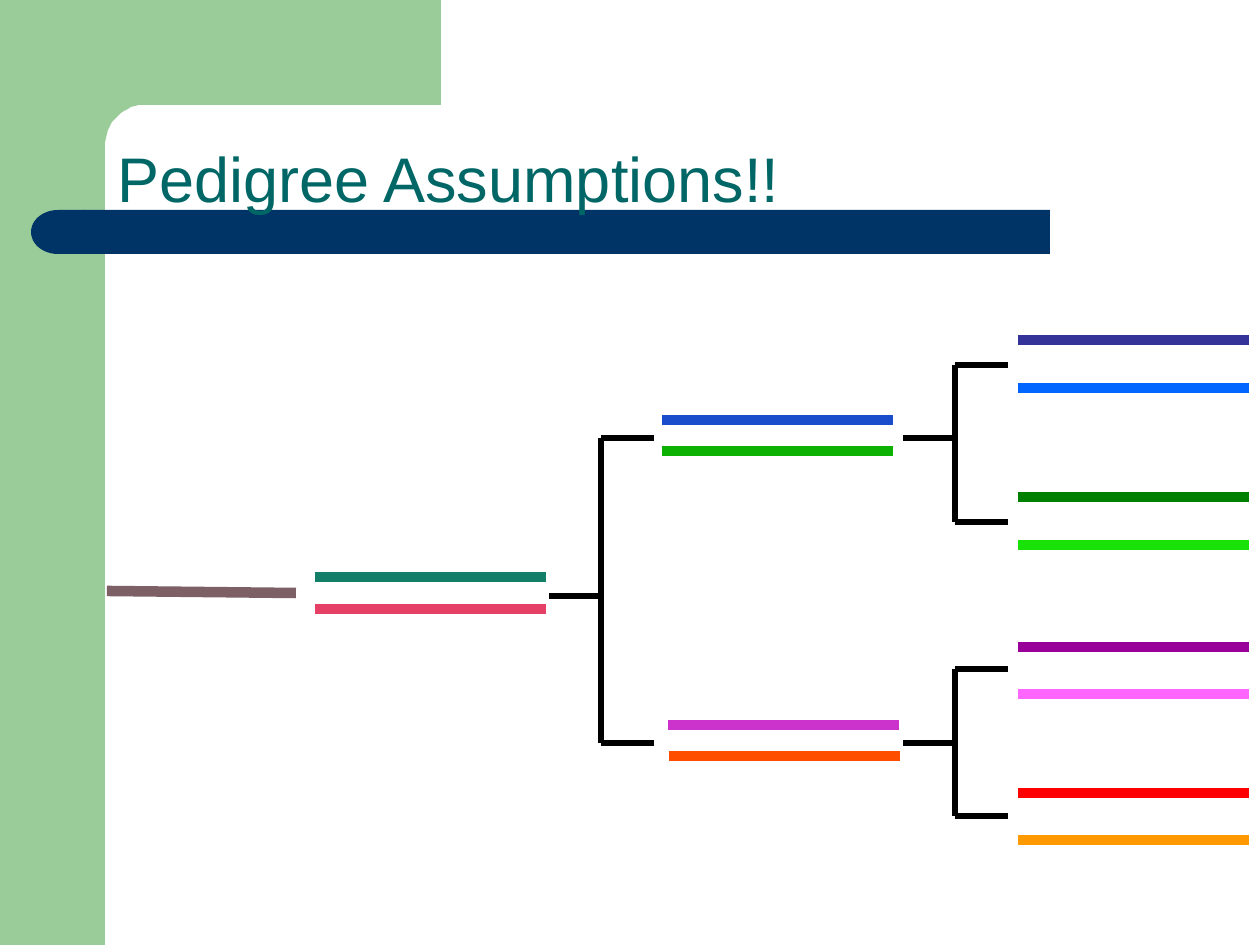
"""Build the Pedigree Assumptions slide: a bracket tree of coloured bars."""
import math

import lxml.etree
import pptx
import pptx.dml.color
import pptx.enum.shapes
import pptx.enum.text
import pptx.oxml.ns
import pptx.util

SCALE = 914400 / 126
COLORS = {
    "frame": "99CC99", "band": "003366", "title": "006666", "bracket": "000000",
    "subject": "7D5F66", "teal": "137F68", "rose": "E64066",
    "royal": "1A4DCC", "green": "0CB104", "orchid": "CC33CC", "flame": "FF4D00",
    "indigo": "333399", "azure": "0066FF", "forest": "008000", "lime": "18E208",
    "purple": "990099", "pink": "FF66FF", "red": "FF0000", "amber": "FF9900",
}
MSO_SHAPE = pptx.enum.shapes.MSO_SHAPE

presentation = pptx.Presentation()
presentation.slide_width = pptx.util.Inches(10)
presentation.slide_height = pptx.util.Inches(7.5)
slide = presentation.slides.add_slide(presentation.slide_layouts[6])


def paint(shape, color):
    shape.shadow.inherit = False
    shape.fill.solid()
    shape.fill.fore_color.rgb = pptx.dml.color.RGBColor.from_string(COLORS[color])
    shape.line.fill.background()


def draw_line(x1, y1, x2, y2, color, points):
    ends = [round(value * SCALE) for value in (x1, y1, x2, y2)]
    line = slide.shapes.add_connector(pptx.enum.shapes.MSO_CONNECTOR.STRAIGHT, *ends)
    line.line.color.rgb = pptx.dml.color.RGBColor.from_string(COLORS[color])
    line.line.width = pptx.util.Pt(points)
    lxml.etree.SubElement(line._element.spPr, pptx.oxml.ns.qn("a:effectLst"))


corner = [
    (143 - 38 * math.sin(math.radians(angle)), 147 - 42 * math.cos(math.radians(angle)))
    for angle in range(0, 91, 6)
]
sidebar = slide.shapes.add_shape(
    MSO_SHAPE.RECTANGLE, 0, 0, round(105 * SCALE), presentation.slide_height)
paint(sidebar, "frame")

outline = slide.shapes.build_freeform(441, 0, scale=SCALE)
outline.add_line_segments([(441, 105), *corner, (105, 161), (63, 161), (63, 0)])
paint(outline.convert_to_shape(), "frame")

for kind, left, width, turn in (
    (MSO_SHAPE.RECTANGLE, 84, 966, 0),
    (MSO_SHAPE.FLOWCHART_DELAY, 31, 54, 180),
):
    band = slide.shapes.add_shape(
        kind, *(round(value * SCALE) for value in (left, 210, width, 44)))
    band.rotation = turn
    paint(band, "band")

title = slide.shapes.add_textbox(
    *(round(value * SCALE) for value in (105, 63, 1092, 158)))
title.text_frame.word_wrap = True
title.text_frame.vertical_anchor = pptx.enum.text.MSO_ANCHOR.BOTTOM
heading = title.text_frame.paragraphs[0].add_run()
heading.text = "Pedigree Assumptions!!"
heading.font.name = "Arial"
heading.font.size = pptx.util.Pt(36)
heading.font.color.rgb = pptx.dml.color.RGBColor.from_string(COLORS["title"])

for spine, top, middle, bottom in (
    (601, 438, 596, 743),
    (955, 365, 438, 522),
    (955, 669, 743, 816),
):
    draw_line(spine + 53, top, spine, top, "bracket", 3)
    draw_line(spine + 53, bottom, spine, bottom, "bracket", 3)
    draw_line(spine, top, spine, bottom, "bracket", 3)
    draw_line(spine, middle, spine - 52, middle, "bracket", 3)

for left, y, color in (
    (315, 577, "teal"), (315, 609, "rose"),
    (662, 420, "royal"), (662, 451, "green"),
    (668, 725, "orchid"), (669, 756, "flame"),
    (1018, 340, "indigo"), (1018, 388, "azure"),
    (1018, 497, "forest"), (1018, 545, "lime"),
    (1018, 647, "purple"), (1018, 694, "pink"),
    (1018, 793, "red"), (1018, 840, "amber"),
):
    draw_line(left, y, left + 231, y, color, 6)
draw_line(107, 591, 296, 593, "subject", 6)

presentation.save("out.pptx")
